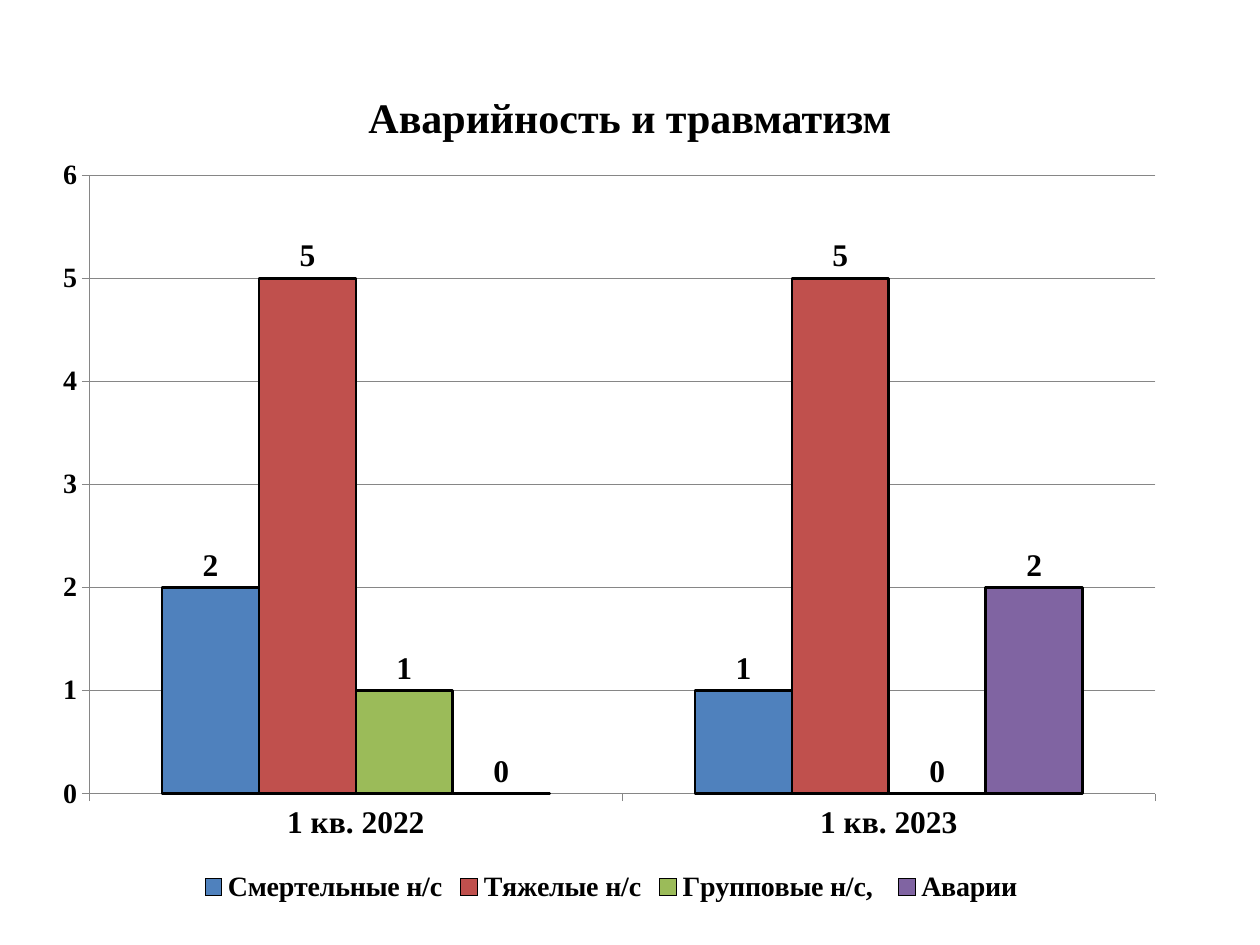
from lxml import etree
from pptx import Presentation
from pptx.chart.data import CategoryChartData
from pptx.dml.color import RGBColor
from pptx.enum.chart import XL_CHART_TYPE as ChartType
from pptx.enum.chart import XL_LABEL_POSITION as LabelPosition
from pptx.enum.chart import XL_LEGEND_POSITION as LegendPosition
from pptx.enum.chart import XL_TICK_MARK as TickMark
from pptx.enum.text import MSO_ANCHOR, PP_ALIGN
from pptx.oxml.ns import qn
from pptx.util import Inches, Pt

BLACK = RGBColor(0x00, 0x00, 0x00)
GRAY = RGBColor(0x86, 0x86, 0x86)
BLUE = RGBColor(0x4F, 0x81, 0xBD)
RED = RGBColor(0xC0, 0x50, 0x4D)
GREEN = RGBColor(0x9B, 0xBB, 0x59)
PURPLE = RGBColor(0x80, 0x64, 0xA2)
FONT = "Times New Roman"

# Content
TITLE = "Аварийность и травматизм"
QUARTERS = ["1 кв. 2022", "1 кв. 2023"]
SERIES = [
    ("Смертельные н/с", (2, 1), BLUE),
    ("Тяжелые н/с", (5, 5), RED),
    ("Групповые н/с, ", (1, 0), GREEN),
    ("Аварии", (0, 2), PURPLE),
]
# Inner plot area as fractions of the chart
PLOT_AREA = {"x": 0.04, "y": 0.04, "w": 0.94, "h": 0.81}


def style_font(font, size):
    font.name = FONT
    font.size = Pt(size)
    font.bold = True
    font.color.rgb = BLACK


def style_axis(axis, size):
    style_font(axis.tick_labels.font, size)
    axis.major_tick_mark = TickMark.OUTSIDE
    axis.minor_tick_mark = TickMark.NONE
    axis.format.line.color.rgb = GRAY
    axis.format.line.width = Pt(0.75)


def place_plot_area(chart, fractions):
    plot_area = chart._chartSpace.chart.plotArea
    for old_layout in plot_area.findall(qn("c:layout")):
        plot_area.remove(old_layout)
    layout = etree.Element(qn("c:layout"))
    manual = etree.SubElement(layout, qn("c:manualLayout"))
    settings = {"layoutTarget": "inner", "xMode": "edge", "yMode": "edge", **fractions}
    for tag, value in settings.items():
        etree.SubElement(manual, qn(f"c:{tag}")).set("val", str(value))
    plot_area.insert(0, layout)


presentation = Presentation()
presentation.slide_width = Inches(10)
presentation.slide_height = Inches(7.5)
slide = presentation.slides.add_slide(presentation.slide_layouts[6])

# Title
title = slide.shapes.add_textbox(Inches(0.5), Inches(0.3), Inches(9), Inches(1.25))
text_frame = title.text_frame
text_frame.word_wrap = True
text_frame.vertical_anchor = MSO_ANCHOR.MIDDLE
text_frame.text = TITLE
paragraph = text_frame.paragraphs[0]
paragraph.alignment = PP_ALIGN.CENTER
style_font(paragraph.runs[0].font, 24)

# Chart
chart_data = CategoryChartData(number_format="General")
chart_data.categories = QUARTERS
for name, values, _ in SERIES:
    chart_data.add_series(name, values)
chart = slide.shapes.add_chart(
    ChartType.COLUMN_CLUSTERED,
    Inches(0.35), Inches(1.15), Inches(9), Inches(6.06), chart_data,
).chart
chart.has_title = False
chart.font.name = "Calibri"
chart.font.size = Pt(18)
chart.font.color.rgb = BLACK
place_plot_area(chart, PLOT_AREA)

# Columns and their values
plot = chart.plots[0]
plot.gap_width = 150
plot.overlap = 0
plot.vary_by_categories = False
for series, (_, _, color) in zip(plot.series, SERIES):
    series.format.fill.solid()
    series.format.fill.fore_color.rgb = color
    series.format.line.color.rgb = BLACK
    series.format.line.width = Pt(1.5)
    labels = series.data_labels
    labels.show_value = True
    labels.position = LabelPosition.OUTSIDE_END
    style_font(labels.font, 18)

# Axes
style_axis(chart.category_axis, 18)
value_axis = chart.value_axis
style_axis(value_axis, 16)
value_axis.minimum_scale = 0
value_axis.maximum_scale = 6
value_axis.major_unit = 1
value_axis.has_major_gridlines = True
value_axis.major_gridlines.format.line.color.rgb = GRAY
value_axis.major_gridlines.format.line.width = Pt(0.75)

# Legend
chart.has_legend = True
chart.legend.position = LegendPosition.BOTTOM
chart.legend.include_in_layout = False
style_font(chart.legend.font, 16)

presentation.save("out.pptx")
